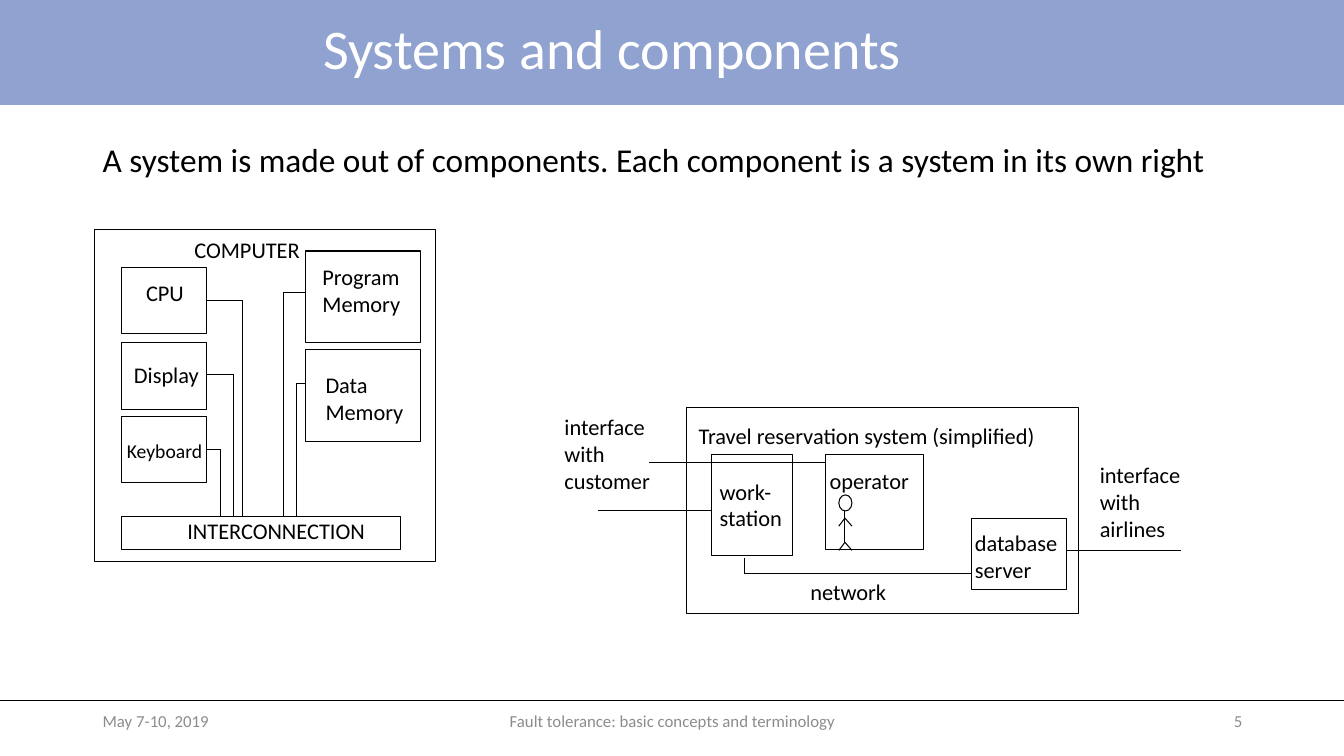
import pptx
import pptx.util
import pptx.dml.color
import pptx.enum.shapes
import pptx.enum.text
import pptx.oxml.ns
import lxml.etree

Inches = pptx.util.Inches
Pt = pptx.util.Pt
SHAPE = pptx.enum.shapes.MSO_SHAPE
ALIGN = pptx.enum.text.PP_ALIGN
ANCHOR = pptx.enum.text.MSO_ANCHOR

COLORS = {"band": "90A2CF", "title": "FFFFFF", "ink": "000000", "footer": "8C8C8C"}
FONT = "Calibri"
SLIDE_WIDTH, SLIDE_HEIGHT = 13.33, 7.5
FOOTER_TOP = 6.95

TITLE = "Systems and components"
STATEMENT = ("A system is made out of components. "
             "Each component is a system in its own right")
# text, left, width, alignment
FOOTERS = [
    ("May 7-10, 2019", 0.92, 3, ALIGN.LEFT),
    ("Fault tolerance: basic concepts and terminology", 4.42, 4.5, ALIGN.CENTER),
    ("5", 9.42, 3, ALIGN.RIGHT),
]

# left, top, width, height
COMPUTER_BOXES = [
    (0.94, 2.28, 3.38, 3.29),
    (1.21, 2.65, 0.84, 0.66),
    (1.21, 3.4, 0.84, 0.66),
    (1.21, 4.13, 0.84, 0.66),
    (3.03, 2.49, 1.14, 0.91),
    (3.03, 3.47, 1.14, 0.91),
    (1.21, 5.12, 2.76, 0.33),
]
TRAVEL_BOXES = [
    (6.81, 4.04, 3.89, 2.05),
    (7.06, 4.51, 0.8, 1),
    (8.19, 4.51, 0.97, 0.94),
    (9.64, 5.14, 0.94, 0.71),
]
# Component edge, height of the wire, and where it turns down to the interconnection
BUS_TOP = 5.12
BUS_WIRES = [
    (2.05, 2.98, 2.41),
    (2.05, 3.72, 2.32),
    (2.05, 4.46, 2.19),
    (3.03, 2.9, 2.81),
    (3.03, 3.8, 2.94),
]
# Each path is a list of points joined by straight lines
TRAVEL_WIRES = [
    [(10.58, 5.46), (11.71, 5.46)],
    [(5.93, 5.06), (7.06, 5.06)],
    [(8.19, 4.59), (6.44, 4.59)],
    [(7.38, 5.54), (7.38, 5.69), (9.64, 5.69)],
]
OPERATOR_HEAD = (8.32, 4.91, 0.13, 0.16)
OPERATOR_LIMBS = [
    [(8.38, 5.06), (8.38, 5.38)],
    [(8.32, 5.46), (8.38, 5.38), (8.45, 5.46)],
    [(8.32, 5.22), (8.38, 5.14), (8.45, 5.22)],
]
# text, left, top, width, height, size
LABELS = [
    ("CPU", 1.35, 2.72, 0.75, 0.52, 16),
    ("Display", 1.23, 3.53, 1.11, 0.52, 16),
    ("Keyboard", 1.16, 4.31, 0.96, 0.34, 14),
    ("Program\vMemory", 3.1, 2.56, 1.53, 0.64, 16),
    ("Data\vMemory", 3.13, 3.63, 1.11, 0.64, 16),
    ("INTERCONNECTION", 1.76, 5.08, 2.58, 0.52, 16),
    ("COMPUTER", 1.83, 2.29, 1.64, 0.52, 16),
    ("work-\vstation", 7.04, 4.69, 0.83, 0.64, 16),
    ("operator", 8.13, 4.59, 1, 0.37, 16),
    ("database\vserver", 9.57, 5.2, 1.03, 0.64, 16),
    ("interface\nwith\vairlines", 10.81, 4.53, 1.06, 0.91, 16),
    ("interface\nwith\vcustomer", 5.5, 4.05, 1.06, 0.91, 16),
    ("Travel reservation system (simplified)", 6.83, 4.14, 3.58, 0.37, 16),
    ("network", 7.94, 5.69, 0.96, 0.37, 16),
]


def rgb(name):
    return pptx.dml.color.RGBColor.from_string(COLORS[name])


def add_outline(slide, place, kind=SHAPE.RECTANGLE):
    shape = slide.shapes.add_shape(kind, *map(Inches, place))
    shape.shadow.inherit = False
    shape.fill.background()
    shape.line.color.rgb = rgb("ink")
    shape.line.width = Pt(0.75)
    return shape


def add_path(slide, points, width=0.75):
    for start, end in zip(points, points[1:]):
        line = slide.shapes.add_connector(
            pptx.enum.shapes.MSO_CONNECTOR.STRAIGHT, *map(Inches, start + end))
        line.line.color.rgb = rgb("ink")
        line.line.width = Pt(width)
        lxml.etree.SubElement(line._element.spPr, pptx.oxml.ns.qn("a:effectLst"))


def add_text(slide, text, place, size, color="ink", align=ALIGN.LEFT,
             anchor=ANCHOR.TOP, spacing=1.0):
    box = slide.shapes.add_textbox(*map(Inches, place))
    frame = box.text_frame
    frame.word_wrap = True
    frame.vertical_anchor = anchor
    frame.text = text
    for para in frame.paragraphs:
        para.alignment = align
        para.line_spacing = spacing
        for span in para.runs:
            span.font.name = FONT
            span.font.size = Pt(size)
            span.font.color.rgb = rgb(color)
    return box


def main():
    deck = pptx.Presentation()
    deck.slide_width = Inches(SLIDE_WIDTH)
    deck.slide_height = Inches(SLIDE_HEIGHT)
    slide = deck.slides.add_slide(deck.slide_layouts[6])

    band = add_outline(slide, (0, 0, SLIDE_WIDTH, 1.04))
    band.fill.solid()
    band.fill.fore_color.rgb = rgb("band")
    band.line.fill.background()
    add_path(slide, [(0, FOOTER_TOP), (SLIDE_WIDTH, FOOTER_TOP)], 0.5)

    add_text(slide, TITLE, (0, 0, 12.14, 1.02), 40, "title",
             ALIGN.CENTER, ANCHOR.MIDDLE, 0.9)
    add_text(slide, STATEMENT, (0.92, 1.41, 11.5, 0.64), 23.8, spacing=0.8)
    for text, left, width, align in FOOTERS:
        add_text(slide, text, (left, FOOTER_TOP, width, 0.4), 12, "footer",
                 align, ANCHOR.MIDDLE)

    for place in COMPUTER_BOXES + TRAVEL_BOXES:
        add_outline(slide, place)
    add_outline(slide, OPERATOR_HEAD, SHAPE.OVAL)

    bus_paths = [[(edge, y), (turn, y), (turn, BUS_TOP)] for edge, y, turn in BUS_WIRES]
    for points in bus_paths + TRAVEL_WIRES + OPERATOR_LIMBS:
        add_path(slide, points)

    for text, *place, size in LABELS:
        label = add_text(slide, text, place, size)
        label.text_frame.margin_right = 0

    deck.save("out.pptx")


if __name__ == "__main__":
    main()
